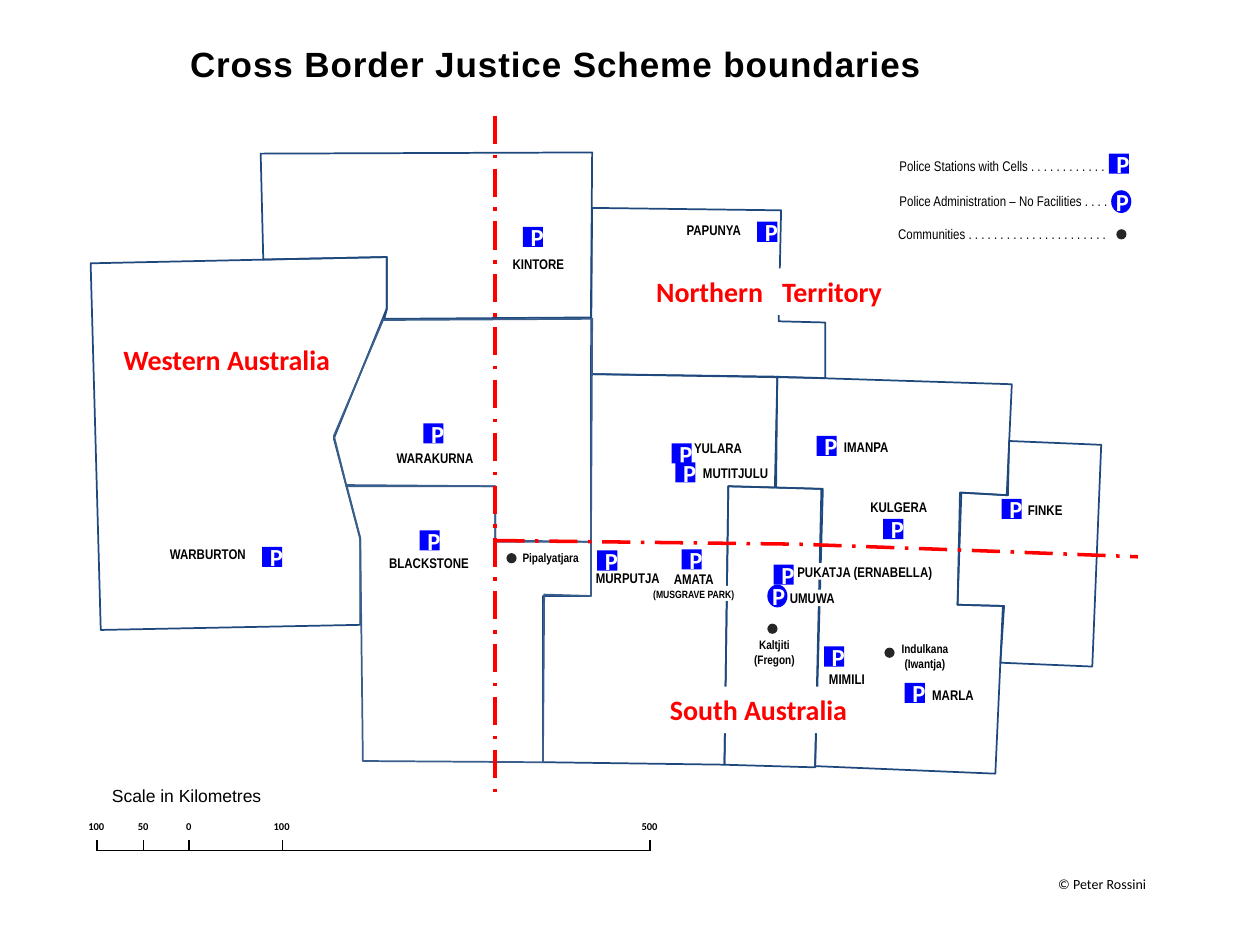
from lxml.etree import SubElement
from pptx import Presentation
from pptx.dml.color import RGBColor
from pptx.enum.dml import MSO_LINE
from pptx.enum.shapes import MSO_CONNECTOR, MSO_SHAPE
from pptx.enum.text import MSO_AUTO_SIZE, PP_ALIGN
from pptx.oxml.ns import qn
from pptx.util import Pt

NAVY = RGBColor(0x1F, 0x49, 0x7D)
STEEL = RGBColor(0x3A, 0x5F, 0x8C)
BLUE = RGBColor(0x00, 0x00, 0xFF)
RED = RGBColor(0xFF, 0x00, 0x00)
CHARCOAL = RGBColor(0x26, 0x26, 0x26)
BLACK = RGBColor(0, 0, 0)
WHITE = RGBColor(0xFF, 0xFF, 0xFF)

SQUARE = (11.5, 11.5)
OVAL = (11.5, 13)
DOT = (5.8, 5.8)

DISTRICTS = [
    [(51.8, 150.5), (221, 146.9), (221, 176.4), (190.8, 250.6), (205.9, 308.2),
     (205.9, 357.1), (57.6, 360)],
    [(149, 87.8), (150.5, 148.3), (221, 146.9), (221, 177.1), (219.6, 182.2),
     (337.7, 181.4), (338.4, 87.1)],
    [(338.4, 118.8), (446.4, 120.2), (445, 183.6), (471.6, 184.3), (471.6, 216),
     (337.7, 213.8)],
    [(337.7, 213.8), (444.2, 215.3), (442.8, 278.6), (416.2, 277.9), (414, 437),
     (310.3, 435.6), (310.3, 340.6), (337.7, 340.6)],
    [(444.2, 215.3), (578.2, 219.6), (575.3, 283), (548.6, 281.5), (547.2, 345.6),
     (573.1, 346.3), (568.8, 442.1), (465.8, 437.8), (469.4, 279.4), (443.5, 278.6)],
    [(416.2, 277.9), (470.2, 279.4), (465.8, 438.5), (414, 437)],
    [(576.7, 252), (629.3, 254.2), (624.2, 380.9), (571.7, 378.7), (573.8, 346.3),
     (547.2, 345.6), (549.4, 281.5), (576, 283)],
]
WESTERN_DISTRICTS = [
    [(218.9, 182.9), (338.4, 182.2), (337.7, 309.6), (283, 308.9), (283, 277.9),
     (198, 277.9), (190.8, 249.1)],
    [(198, 277.2), (283, 277.9), (283, 309.6), (337.7, 309.6), (337.7, 340.6),
     (311, 339.8), (310.3, 435.6), (207.4, 434.9), (205.9, 307.4)],
]
STATE_BORDER = [(283.7, 308.9), (456.5, 311), (563.8, 314.9), (650.2, 318.2)]

# words, left, top, width
REGIONS = [
    (["Northern", "Territory"], 367.9, 153.4, 149),
    (["Western Australia"], 63.4, 192.2, 133.9),
    (["South Australia"], 375.8, 392.4, 117.4),
]
# name, marker left and top, label left, top and width
STATIONS = [
    ("WARAKURNA", 241.9, 241.9, 219.6, 253.4, 59),
    ("WARBURTON", 149.8, 312.5, 90, 308.2, 59),
    ("BLACKSTONE", 239.8, 303.1, 215.3, 313.2, 60.5),
    ("MURPUTJA", 341.3, 314.6, 333.4, 321.8, 51.1),
    ("YULARA", 383.8, 253.4, 389.5, 247.7, 42.5),
    ("MUTITJULU", 385.9, 264.2, 394.6, 262.1, 51.8),
    ("IMANPA", 466.6, 249.1, 475.2, 247, 41),
    ("KULGERA", 504.7, 296.6, 490.3, 281.5, 47.5),
    ("MIMILI", 470.9, 369.4, 466.6, 379.4, 35.3),
    ("MARLA", 517, 390.2, 525.6, 388.8, 38.9),
    ("FINKE", 572.4, 285.1, 580.3, 283, 34.6),
    ("KINTORE", 298.8, 129.6, 285.8, 142.6, 44.6),
    ("PAPUNYA", 432.7, 126.7, 385.2, 123.1, 46.8),
]
# lines, dot left and top, label left, top, width and height
COMMUNITIES = [
    (["Kaltjiti", "(Fregon)"], 438.5, 356.4, 423.4, 360.7, 38.2, 24.5),
    (["Pipalyatjara"], 289.4, 316.1, 290.9, 311, 47.5, 15.8),
    (["Indulkana", "(Iwantja)"], 505.4, 370.1, 507.6, 362.9, 41.8, 24.5),
]
LEGEND = [
    ("Police Stations with Cells . . . . . . . . . . . .", 506.9, 86.4, 134.6),
    ("Police Administration – No Facilities . . . .", 506.9, 106.6, 135.4),
    ("Communities . . . . . . . . . . . . . . . . . . . . . .", 506.2, 125.3, 136.8),
]
SCALE_Y = 486
SCALE_TICKS = [("100", 55.4), ("50", 82.1), ("0", 108), ("100", 161.3), ("500", 371.5)]

presentation = Presentation()
presentation.slide_width = Pt(720)
presentation.slide_height = Pt(540)
slide = presentation.slides.add_slide(presentation.slide_layouts[6])
shapes = slide.shapes


def add_run(paragraph, text, size, font="Arial Narrow", bold=True, color=BLACK, spacing=0):
    """Add a run; spacing is the extra space after each letter, in points."""
    run = paragraph.add_run()
    run.text = text
    run.font.size = Pt(size)
    run.font.name = font
    run.font.bold = bold
    run.font.color.rgb = color
    if spacing:
        run._r.get_or_add_rPr().set("spc", str(round(spacing * 100)))


def add_box(left, top, width, height, fill=None, tight=False):
    box = shapes.add_textbox(Pt(left), Pt(top), Pt(width), Pt(height))
    frame = box.text_frame
    frame.word_wrap = False
    frame.auto_size = MSO_AUTO_SIZE.SHAPE_TO_FIT_TEXT
    if tight:
        frame.margin_left = frame.margin_right = frame.margin_top = frame.margin_bottom = 0
    if fill is not None:
        box.fill.solid()
        box.fill.fore_color.rgb = fill
    return frame


def add_label(lines, left, top, width, height=17.3, sizes=(8, 8), align=PP_ALIGN.LEFT,
              fill=None, tight=False, **style):
    frame = add_box(left, top, width, height, fill, tight)
    for index, (line, size) in enumerate(zip(lines, sizes)):
        paragraph = frame.add_paragraph() if index else frame.paragraphs[0]
        paragraph.alignment = align
        add_run(paragraph, line, size, **style)


def add_solid(kind, left, top, size, fill):
    shape = shapes.add_shape(kind, Pt(left), Pt(top), Pt(size[0]), Pt(size[1]))
    shape.shadow.inherit = False
    shape.fill.solid()
    shape.fill.fore_color.rgb = fill
    shape.line.fill.background()
    return shape


def add_police_marker(kind, left, top, size):
    marker = add_solid(kind, left, top, size, BLUE)
    paragraph = marker.text_frame.paragraphs[0]
    paragraph.alignment = PP_ALIGN.CENTER
    add_run(paragraph, "P", 14, "Calibri", color=WHITE)


def add_station(left, top):
    add_police_marker(MSO_SHAPE.RECTANGLE, left, top, SQUARE)


def add_administration(left, top):
    add_police_marker(MSO_SHAPE.OVAL, left, top, OVAL)


def add_community(left, top):
    add_solid(MSO_SHAPE.OVAL, left, top, DOT, CHARCOAL)


def add_outline(points, color, width=1, close=True):
    (start, *rest) = [(Pt(x), Pt(y)) for x, y in points]
    builder = shapes.build_freeform(*start, scale=1)
    builder.add_line_segments(rest, close=close)
    outline = builder.convert_to_shape()
    outline.shadow.inherit = False
    outline.fill.background()
    outline.line.color.rgb = color
    outline.line.width = Pt(width)
    return outline


def add_line(x1, y1, x2, y2, color=BLACK, width=0.75):
    line = shapes.add_connector(MSO_CONNECTOR.STRAIGHT, Pt(x1), Pt(y1), Pt(x2), Pt(y2))
    line.line.color.rgb = color
    line.line.width = Pt(width)
    SubElement(line._element.spPr, qn("a:effectLst"))
    return line


for points in DISTRICTS:
    add_outline(points, NAVY)

for words, left, top, width in REGIONS:
    paragraph = add_box(left, top, width, 26.6, WHITE).paragraphs[0]
    for index, word in enumerate(words):
        if index:
            add_run(paragraph, " ", 16, "Calibri", color=RED, spacing=7.2)
        add_run(paragraph, word, 16, "Calibri", color=RED)

for name, marker_left, marker_top, *label_place in STATIONS:
    add_station(marker_left, marker_top)
    add_label([name], *label_place)

for lines, dot_left, dot_top, *label_place in COMMUNITIES:
    add_community(dot_left, dot_top)
    add_label(lines, *label_place, sizes=(7, 7), align=PP_ALIGN.CENTER)

add_station(442.1, 322.6)
add_label(["PUKATJA (ERNABELLA)"], 455, 321.8, 78.5, 9.4, align=PP_ALIGN.CENTER,
          fill=WHITE, tight=True)
add_label(["UMUWA"], 451.4, 337, 25.9, 9.4, fill=WHITE, tight=True)
add_administration(438.5, 334.1)

add_station(389.5, 313.9)
add_solid(MSO_SHAPE.RECTANGLE, 414, 334.8, (3.6, 8.6), WHITE)
add_label(["AMATA", "(MUSGRAVE PARK)"], 373, 326.2, 46.8, sizes=(8, 6),
          align=PP_ALIGN.CENTER, tight=True)

add_station(633.6, 87.8)
add_administration(635, 108.7)
add_community(637.9, 131)
for text, *place in LEGEND:
    add_label([text], *place, bold=False)

add_line(54.7, SCALE_Y, 372.2, SCALE_Y)
for text, x in SCALE_TICKS:
    add_line(x, SCALE_Y - 6, x, SCALE_Y)
    width = 14.4 + 3.2 * len(text)
    add_label([text], x - width / 2, SCALE_Y - 20.9, width, 14.4, sizes=[6], font="Calibri")
add_label(["Scale in Kilometres"], 56.9, 445, 100.8, 19.4, sizes=[10], font="Arial", bold=False)

add_label(["Cross Border Justice Scheme boundaries"], 101.5, 20.9, 442.8, 31.7, sizes=[20],
          font="Arial", spacing=0.5)
add_label(["© Peter Rossini"], 597.6, 496.8, 65.5, font="Calibri", bold=False)

for points in WESTERN_DISTRICTS:
    add_outline(points, STEEL)

for border in (add_line(283, 66.2, 283, 457.2, RED, 2),
               add_outline(STATE_BORDER, RED, 2, close=False)):
    border.line.dash_style = MSO_LINE.LONG_DASH_DOT

presentation.save("out.pptx")
